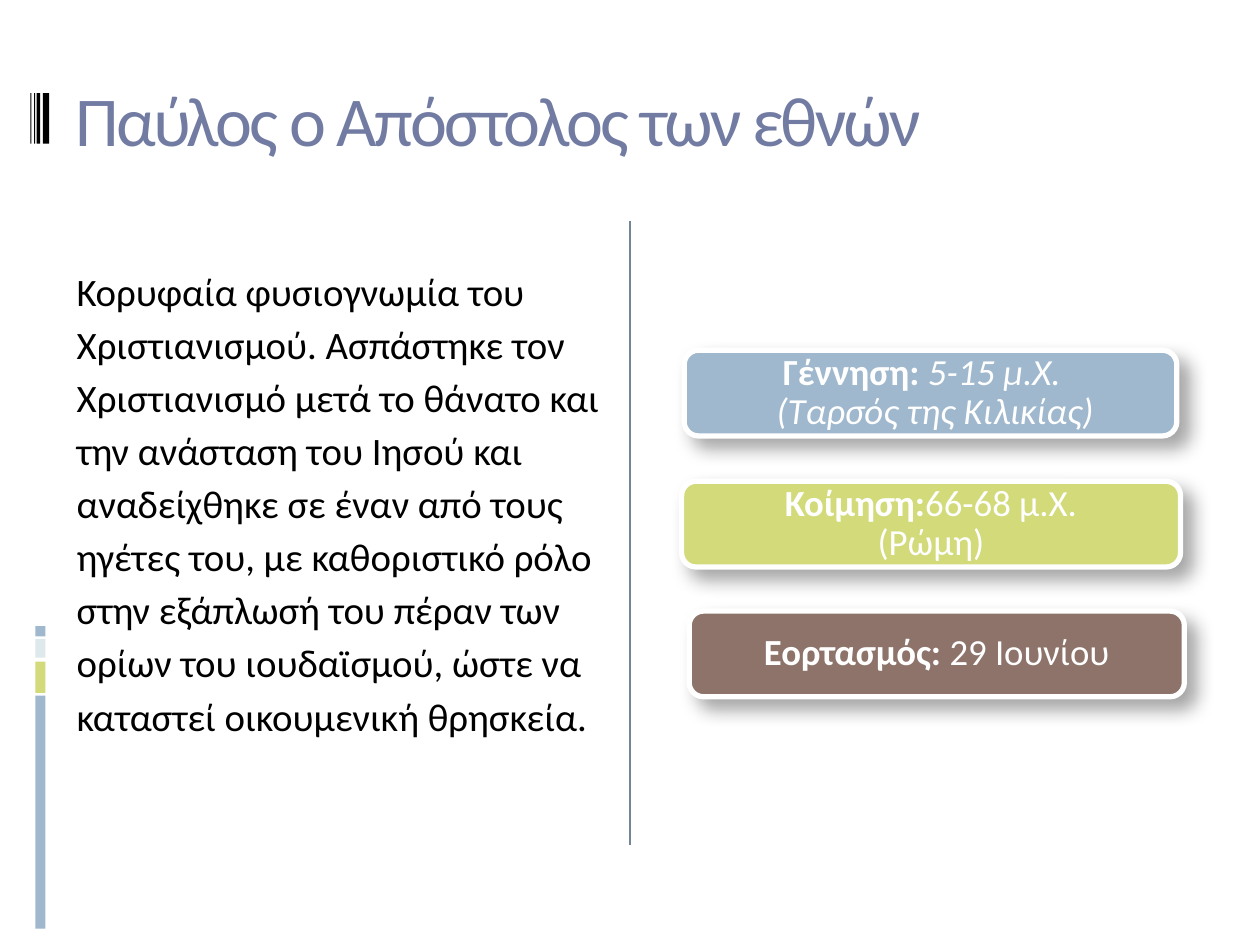
"""Build the slide on Paul the Apostle with three fact boxes."""
from lxml import etree
from pptx import Presentation
from pptx.dml.color import RGBColor
from pptx.enum import shapes, text
from pptx.oxml import parse_xml
from pptx.oxml.ns import nsdecls, qn
from pptx.util import Inches, Pt


def color(value):
    return RGBColor.from_string(value)


def add_block(kind, left, top, width, height, fill):
    shape = slide.shapes.add_shape(kind, Inches(left), Inches(top), Inches(width), Inches(height))
    shape.shadow.inherit = False
    shape.fill.solid()
    shape.fill.fore_color.rgb = color(fill)
    shape.line.fill.background()
    return shape


presentation = Presentation()
presentation.slide_width = Inches(10)
presentation.slide_height = Inches(7.5)
slide = presentation.slides.add_slide(presentation.slide_layouts[6])

side_bars = [
    (5.52, 1.85, "9FB8CD"),
    (5.25, 0.25, "D2DA7A"),
    (5.07, 0.15, "DDE9EC"),
    (4.97, 0.08, "9FB8CD"),
]
for top, height, fill in side_bars:
    add_block(shapes.MSO_SHAPE.RECTANGLE, 0.28, top, 0.08, height, fill)

for left, width in [(0.34, 0.05), (0.29, 0.03), (0.27, 0.01), (0.24, 0.01)]:
    add_block(shapes.MSO_SHAPE.RECTANGLE, left, 0.74, width, 0.4, "000000")

divider = slide.shapes.add_connector(
    shapes.MSO_CONNECTOR.STRAIGHT, Inches(5), Inches(1.75), Inches(5), Inches(6.71))
divider.line.color.rgb = color("728697")
divider.line.width = Pt(0.75)
etree.SubElement(divider._element.spPr, qn("a:effectLst"))

title_text = "Παύλος ο Απόστολος των εθνών"
body_text = (
    "Κορυφαία φυσιογνωμία του Χριστιανισμού. Ασπάστηκε τον Χριστιανισμό μετά το θάνατο "
    "και την ανάσταση του Ιησού και αναδείχθηκε σε έναν από τους ηγέτες του, με καθοριστικό "
    "ρόλο στην εξάπλωσή του πέραν των ορίων του ιουδαϊσμού, ώστε να καταστεί οικουμενική "
    "θρησκεία."
)
text_boxes = [
    (0.5, 0.23, 9, 1.42, title_text, 40, "727CA3", text.MSO_ANCHOR.MIDDLE, 1.0, -150),
    (0.51, 2.02, 4.42, 4.95, body_text, 22.2, "000000", text.MSO_ANCHOR.TOP, 1.14, 0),
]
for left, top, width, height, content, size, ink, anchor, line_spacing, tracking in text_boxes:
    box = slide.shapes.add_textbox(Inches(left), Inches(top), Inches(width), Inches(height))
    frame = box.text_frame
    frame.word_wrap = True
    frame.vertical_anchor = anchor
    paragraph = frame.paragraphs[0]
    paragraph.line_spacing = line_spacing
    paragraph.font.name = "Calibri"
    paragraph.font.size = Pt(size)
    paragraph.font.color.rgb = color(ink)
    run = paragraph.add_run()
    run.text = content
    run.font._element.set("spc", str(tracking))

facts = [
    (5.43, 2.78, 3.91, "9FB8CD", "Γέννηση: ", ["5-15 μ.Χ.", "(Ταρσός της Κιλικίας)"], True),
    (5.41, 3.82, 3.96, "D2DA7A", "Κοίμηση:", ["66-68 μ.Χ.", "(Ρώμη)"], False),
    (5.47, 4.85, 3.93, "8E736A", "Εορτασμός: ", ["29 Ιουνίου"], False),
]
for left, top, width, fill, label, lines, is_birth in facts:
    shape = add_block(shapes.MSO_SHAPE.ROUNDED_RECTANGLE, left, top, width, 0.68, fill)
    shape.line.color.rgb = color("FFFFFF")
    shape.line.width = Pt(3)
    shape._element.spPr.find(qn("a:effectLst")).append(parse_xml(
        f'<a:outerShdw {nsdecls("a")} blurRad="{Pt(10.2)}" dist="{Pt(8)}" dir="2700000" '
        'algn="tl" rotWithShape="0"><a:srgbClr val="000000"><a:alpha val="35000"/>'
        '</a:srgbClr></a:outerShdw>'))
    frame = shape.text_frame
    frame.word_wrap = True
    frame.vertical_anchor = text.MSO_ANCHOR.MIDDLE
    frame.margin_left = frame.margin_right = Inches(0.13)
    frame.margin_top = frame.margin_bottom = 0
    paragraph = frame.paragraphs[0]
    paragraph.line_spacing = 0.9
    paragraph.alignment = text.PP_ALIGN.CENTER
    if is_birth:
        paragraph.alignment = text.PP_ALIGN.LEFT
        properties = paragraph._p.get_or_add_pPr()
        properties.set("marL", str(Inches(0.57)))
        properties.set("indent", str(Inches(0.05)))
    paragraph.font.name = "Calibri"
    paragraph.font.size = Pt(21)
    paragraph.font.color.rgb = color("FFFFFF")
    run = paragraph.add_run()
    run.text = label
    run.font.bold = True
    for index, line in enumerate(lines):
        if index:
            paragraph.add_line_break()
        run = paragraph.add_run()
        run.text = line
        run.font.italic = is_birth

presentation.save("out.pptx")
